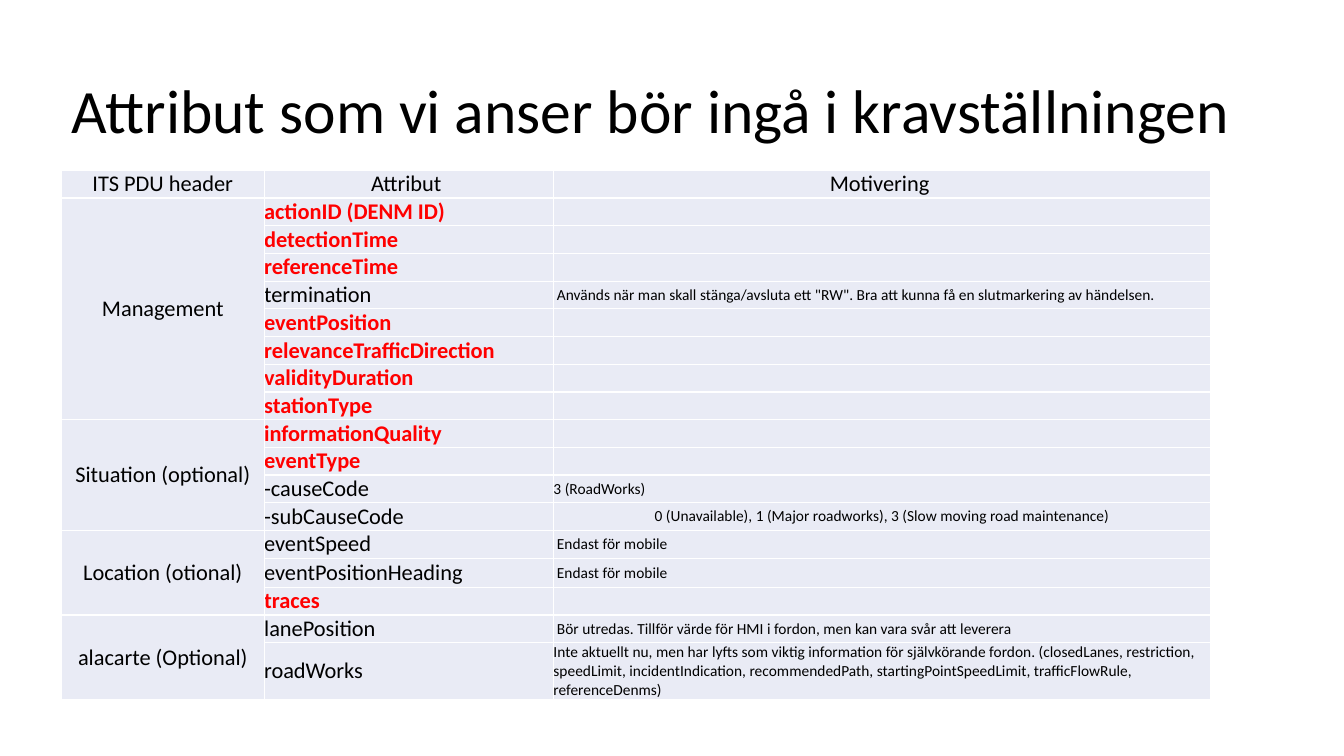
from dataclasses import dataclass

from lxml import etree
from pptx import Presentation
from pptx import util as u
from pptx.dml.color import RGBColor
from pptx.enum import text
from pptx.oxml.ns import qn


@dataclass(frozen=True)
class Theme:
    font: str = "Calibri"
    ink: str = "000000"
    required: str = "FF0000"
    cell: str = "E9EBF5"
    border: str = "FFFFFF"
    title_pt: int = 44
    body_pt: int = 16
    note_pt: int = 11
    border_pt: int = 1


HEADER = ("ITS PDU header", "Attribut ", "Motivering ")
CENTERED_NOTE = "0 (Unavailable), 1 (Major roadworks), 3 (Slow moving road maintenance)"
# Each attribute: name, required, motivation
GROUPS = [
    ("Management", [
        ("actionID (DENM ID)", True, ""),
        ("detectionTime", True, ""),
        ("referenceTime", True, ""),
        ("termination", False, ' Används när man skall stänga/avsluta ett "RW". '
                               "Bra att kunna få en slutmarkering av händelsen."),
        ("eventPosition", True, ""),
        ("relevanceTrafficDirection", True, ""),
        ("validityDuration", True, ""),
        ("stationType", True, ""),
    ]),
    ("Situation (optional)", [
        ("informationQuality", True, ""),
        ("eventType", True, ""),
        ("-causeCode", False, "3 (RoadWorks)"),
        ("-subCauseCode", False, CENTERED_NOTE),
    ]),
    ("Location (otional)", [
        ("eventSpeed", False, " Endast för mobile"),
        ("eventPositionHeading", False, " Endast för mobile"),
        ("traces", True, ""),
    ]),
    ("alacarte (Optional)", [
        ("lanePosition", False, " Bör utredas. Tillför värde för HMI i fordon, "
                                "men kan vara svår att leverera"),
        ("roadWorks", False, "Inte aktuellt nu, men har lyfts som viktig information för "
                             "självkörande fordon. (closedLanes, restriction, speedLimit, "
                             "incidentIndication, recommendedPath, startingPointSpeedLimit, "
                             "trafficFlowRule, referenceDenms)"),
    ]),
]
COLUMN_WIDTHS = (2.01, 2.87, 6.52)
ROW_HEIGHT = 4.4 / 16
TALL_ROWS = {14: 0.29, 17: 0.56}


class SlideBuilder:
    def __init__(self, slide, theme):
        self.slide = slide
        self.theme = theme

    def style_run(self, r, size, color, bold=False):
        r.font.name = self.theme.font
        r.font.size = u.Pt(size)
        r.font.bold = bold
        r.font.color.rgb = RGBColor.from_string(color)

    def title(self, words, left, top, width, height):
        sp = self.slide.shapes.title
        sp.left, sp.top, sp.width, sp.height = map(u.Inches, (left, top, width, height))
        tf = sp.text_frame
        tf.text = words
        tf.word_wrap = True
        tf.auto_size = text.MSO_AUTO_SIZE.NONE
        tf.vertical_anchor = text.MSO_ANCHOR.MIDDLE
        p = tf.paragraphs[0]
        p.alignment = text.PP_ALIGN.LEFT
        p.line_spacing = 0.9
        self.style_run(p.runs[0], self.theme.title_pt, self.theme.ink)

    def table(self, left, top, widths, heights):
        frame = self.slide.shapes.add_table(
            len(heights), len(widths), u.Inches(left), u.Inches(top),
            u.Inches(sum(widths)), u.Inches(sum(heights)))
        tbl = frame.table
        tbl.first_row = tbl.horz_banding = False
        for column, width in zip(tbl.columns, widths):
            column.width = u.Inches(width)
        for row, height in zip(tbl.rows, heights):
            row.height = u.Inches(height)
        for cell in tbl.iter_cells():
            self.blank_cell(cell)
        return tbl

    def blank_cell(self, cell):
        """Fill and border a cell, and keep its empty line small."""
        cell.margin_left = cell.margin_right = cell.margin_top = cell.margin_bottom = 0
        cell.vertical_anchor = text.MSO_ANCHOR.MIDDLE
        cell.fill.solid()
        cell.fill.fore_color.rgb = RGBColor.from_string(self.theme.cell)
        tc_pr = cell._tc.get_or_add_tcPr()
        for index, side in enumerate(("a:lnL", "a:lnR", "a:lnT", "a:lnB")):
            line = etree.Element(qn(side), w=str(u.Pt(self.theme.border_pt)))
            fill = etree.SubElement(line, qn("a:solidFill"))
            etree.SubElement(fill, qn("a:srgbClr"), val=self.theme.border)
            tc_pr.insert(index, line)
        p = cell.text_frame.paragraphs[0]
        etree.SubElement(p._p, qn("a:endParaRPr"), sz=str(self.theme.note_pt * 100))

    def cell_text(self, cell, words, size, centered=False, required=False):
        p = cell.text_frame.paragraphs[0]
        p.text = words
        p.alignment = text.PP_ALIGN.CENTER if centered else text.PP_ALIGN.LEFT
        color = self.theme.required if required else self.theme.ink
        self.style_run(p.runs[0], size, color, required)


def main():
    prs = Presentation()
    prs.slide_width, prs.slide_height = u.Inches(13.33), u.Inches(7.5)
    theme = Theme()
    s = SlideBuilder(prs.slides.add_slide(prs.slide_layouts[5]), theme)
    s.title("Attribut som vi anser bör ingå i kravställningen", 0.61, 0.4, 11.8, 1.45)

    row_count = 1 + sum(len(attributes) for _, attributes in GROUPS)
    heights = [TALL_ROWS.get(row, ROW_HEIGHT) for row in range(row_count)]
    tbl = s.table(0.61, 1.69, COLUMN_WIDTHS, heights)
    for column, heading in enumerate(HEADER):
        s.cell_text(tbl.cell(0, column), heading, theme.body_pt, centered=True)

    row = 1
    for group, attributes in GROUPS:
        group_cell = tbl.cell(row, 0)
        group_cell.merge(tbl.cell(row + len(attributes) - 1, 0))
        s.cell_text(group_cell, group, theme.body_pt, centered=True)
        for name, required, note in attributes:
            s.cell_text(tbl.cell(row, 1), name, theme.body_pt, required=required)
            if note:
                s.cell_text(tbl.cell(row, 2), note, theme.note_pt,
                            centered=note == CENTERED_NOTE)
            row += 1
    prs.save("out.pptx")


if __name__ == "__main__":
    main()
